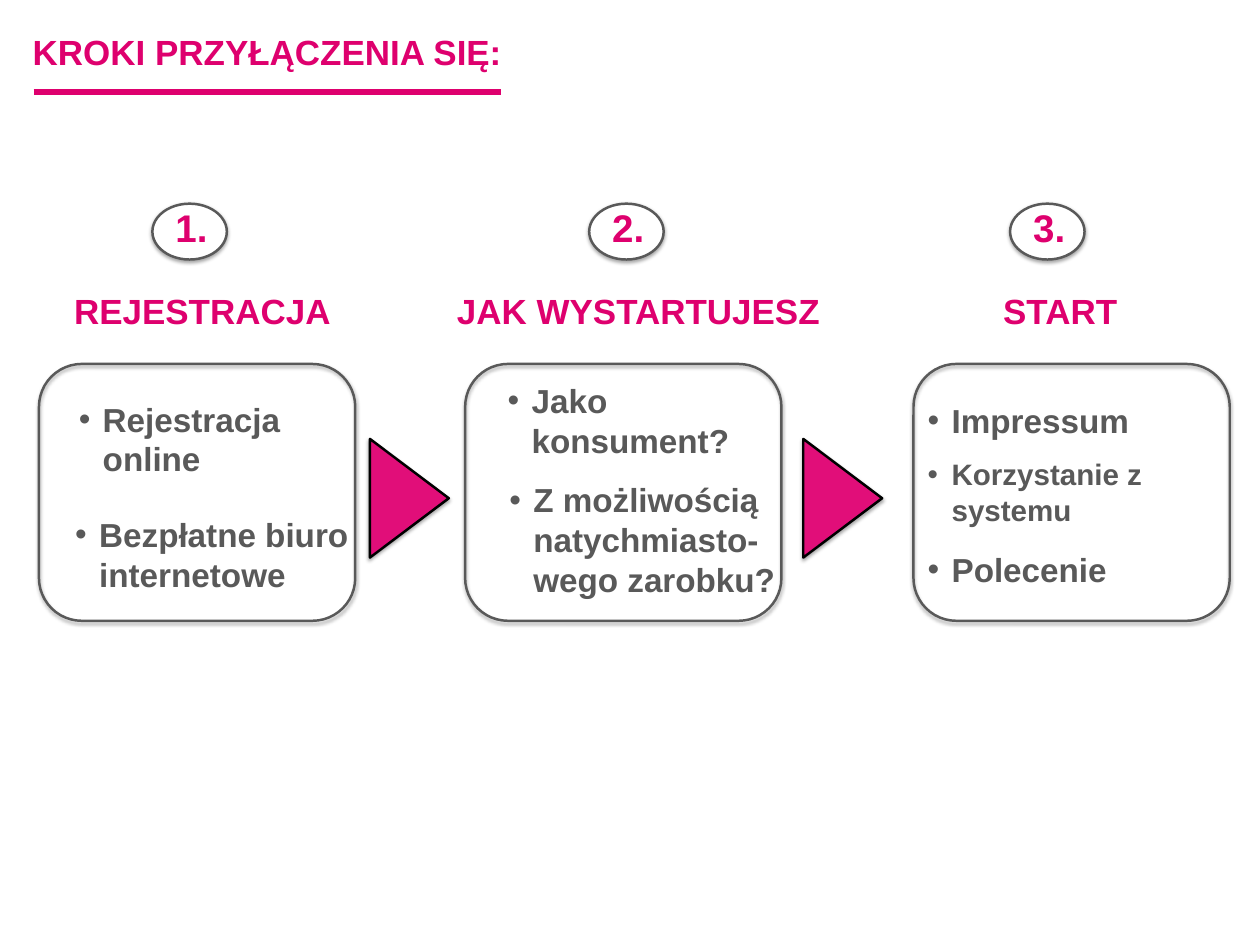
from lxml import etree
from pptx import Presentation
from pptx.dml.color import RGBColor
from pptx.enum.shapes import MSO_CONNECTOR, MSO_SHAPE
from pptx.enum.text import MSO_ANCHOR, MSO_AUTO_SIZE, PP_ALIGN
from pptx.oxml.ns import qn
from pptx.util import Pt

OVAL, BOX, ARROW = MSO_SHAPE.OVAL, MSO_SHAPE.ROUNDED_RECTANGLE, MSO_SHAPE.DOWN_ARROW
STRAIGHT = MSO_CONNECTOR.STRAIGHT
TOP, MIDDLE = MSO_ANCHOR.TOP, MSO_ANCHOR.MIDDLE
LEFT, CENTER = PP_ALIGN.LEFT, PP_ALIGN.CENTER
NO_AUTOFIT = MSO_AUTO_SIZE.NONE

MAGENTA = RGBColor(0xDE, 0x00, 0x6E)
ARROW_PINK = RGBColor(0xE1, 0x0E, 0x79)
GRAY = RGBColor(0x59, 0x59, 0x59)
WHITE = RGBColor(0xFF, 0xFF, 0xFF)
BLACK = RGBColor(0x00, 0x00, 0x00)

INDENT = 19.44
HEADING_WIDTH = 320

# number, oval left, heading, heading centre, box left,
# items: text, left, top, width, height, size
STEPS = [
    ("1.", 123.84, "REJESTRACJA", 164.5, 31.68, [
        ("Rejestracja online", 58.3, 318.2, 239.8, 77, 27),
        ("Bezpłatne biuro internetowe", 55.4, 411.8, 257.8, 77, 27)]),
    ("2.", 478.8, "JAK WYSTARTUJESZ", 518.8, 378, [
        ("Jako konsument?", 406.8, 303.1, 239.8, 77, 27),
        ("Z możliwością natychmiasto-wego zarobku?", 408.2, 383.8, 239.8, 109.4, 27)]),
    ("3.", 820.8, "START", 861.5, 742.32, [
        ("Impressum", 748.1, 319.7, 239.8, 43.9, 27),
        ("Korzystanie z\vsystemu", 748.1, 365, 239.8, 69.8, 24),
        ("Polecenie", 748.1, 440.6, 239.8, 43.9, 27)]),
]


def write(sp, text, size, color, inset, anchor=TOP, align=LEFT, wrap=True):
    tf = sp.text_frame
    tf.text = text
    tf.auto_size = NO_AUTOFIT
    tf.word_wrap = wrap
    tf.vertical_anchor = anchor
    tf.margin_left = tf.margin_right = tf.margin_top = tf.margin_bottom = Pt(inset)
    p = tf.paragraphs[0]
    p.alignment = align
    for r in p.runs:
        r.font.name = "Arial"
        r.font.size = Pt(size)
        r.font.bold = True
        r.font.color.rgb = color
    return p


def add_shadowed(kind, x, y, w, h, line, fill=None):
    sp = s.shapes.add_shape(kind, Pt(x), Pt(y), Pt(w), Pt(h))
    if fill is None:
        sp.fill.background()
    else:
        sp.fill.solid()
        sp.fill.fore_color.rgb = fill
    sp.line.color.rgb = line
    sp.line.width = Pt(2)
    sp.shadow.inherit = False
    effects = sp._element.spPr.find(qn("a:effectLst"))
    shadow = etree.SubElement(effects, qn("a:outerShdw"), blurRad=str(Pt(3)),
                              dist=str(Pt(1.8)), dir="5400000", rotWithShape="0")
    color = etree.SubElement(shadow, qn("a:srgbClr"), val="000000")
    etree.SubElement(color, qn("a:alpha"), val="35000")
    return sp


prs = Presentation()
prs.slide_width, prs.slide_height = Pt(1023.84), Pt(768.24)
s = prs.slides.add_slide(prs.slide_layouts[5])

title = s.shapes.title
title.left, title.top, title.width, title.height = Pt(23), Pt(20.9), Pt(521.3), Pt(41.8)
write(title, "KROKI PRZYŁĄCZENIA SIĘ:", 28.4, MAGENTA, 3.6)

rule = s.shapes.add_connector(STRAIGHT, Pt(27.4), Pt(74.9), Pt(406.8), Pt(74.9))
rule.line.color.rgb = MAGENTA
rule.line.width = Pt(4.5)
etree.SubElement(rule._element.spPr, qn("a:effectLst"))

for number, oval_x, heading, center, box_x, items in STEPS:
    add_shadowed(OVAL, oval_x, 165.6, 60.5, 45.4, GRAY, WHITE)
    tb = s.shapes.add_textbox(Pt(oval_x + 13.7), Pt(160.6), Pt(36.7), Pt(48.2))
    write(tb, number, 31.3, MAGENTA, 5, wrap=False)

    tb = s.shapes.add_textbox(Pt(center - HEADING_WIDTH / 2), Pt(229.7),
                              Pt(HEADING_WIDTH), Pt(46))
    write(tb, heading, 28.4, MAGENTA, 5.76, MIDDLE, CENTER)

    add_shadowed(BOX, box_x, 295.9, 257, 208.8, GRAY)
    for text, x, y, w, h, size in items:
        tb = s.shapes.add_textbox(Pt(x), Pt(y), Pt(w), Pt(h))
        p = write(tb, text, size, GRAY, 5.76, MIDDLE)
        pPr = p._p.get_or_add_pPr()
        pPr.set("marL", str(Pt(INDENT)))
        pPr.set("indent", str(-Pt(INDENT)))
        etree.SubElement(pPr, qn("a:buFont"), typeface="Arial")
        etree.SubElement(pPr, qn("a:buChar"), char="•")

for x in (284.4, 636.5):
    arrow = add_shadowed(ARROW, x, 373, 96.5, 64.1, BLACK, ARROW_PINK)
    arrow.rotation = 270
    arrow.adjustments[0] = 0.5
    arrow.adjustments[1] = 1

prs.save("out.pptx")
